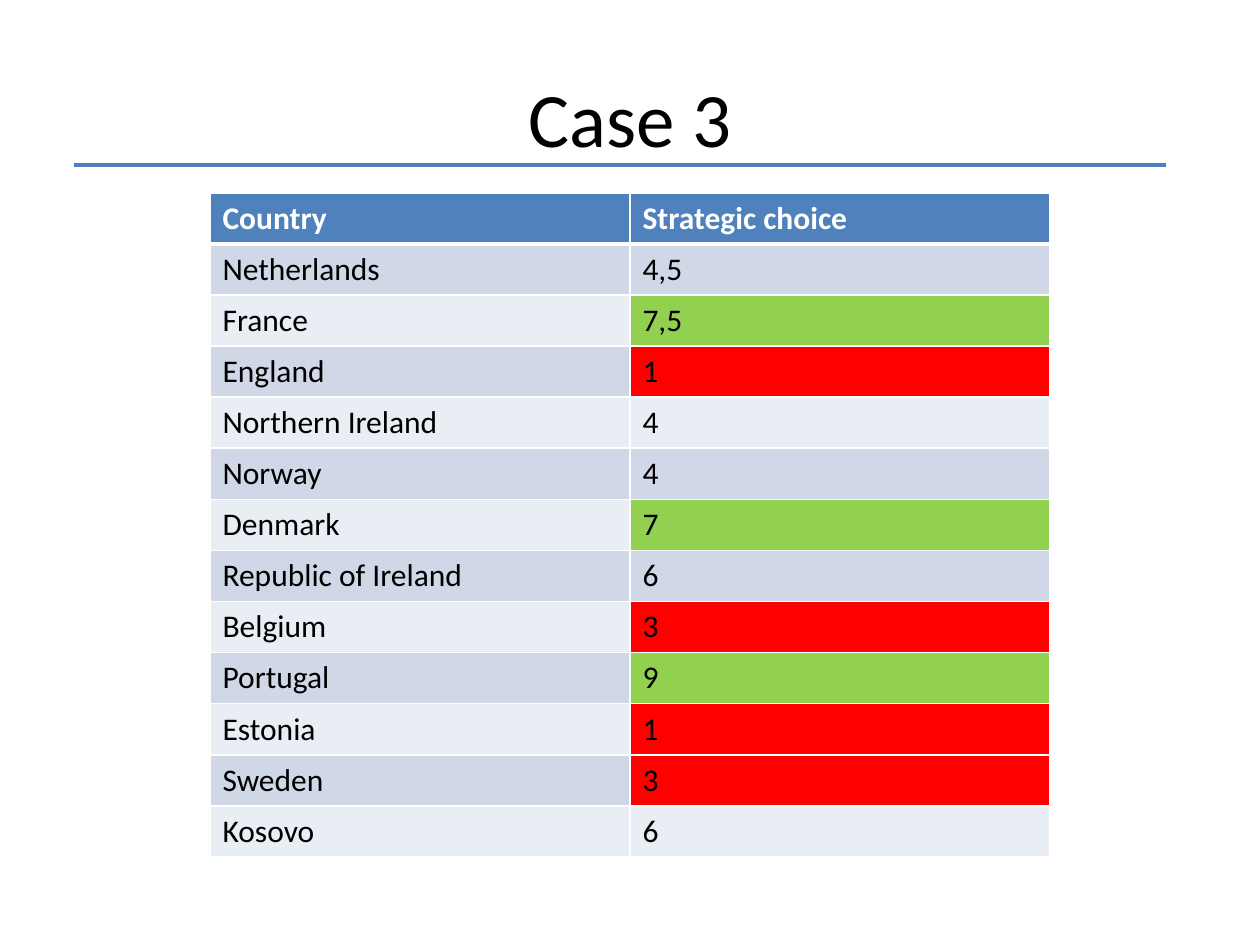
from lxml import etree
from pptx import Presentation
from pptx.dml.color import RGBColor
from pptx.enum.shapes import MSO_CONNECTOR
from pptx.enum.text import MSO_ANCHOR, PP_ALIGN
from pptx.oxml.ns import qn
from pptx.util import Inches, Pt

STRAIGHT = MSO_CONNECTOR.STRAIGHT
MIDDLE = MSO_ANCHOR.MIDDLE
LEFT, CENTER = PP_ALIGN.LEFT, PP_ALIGN.CENTER

# Content
TITLE = "Case 3"
HEADER = ("Country", "Strategic choice")
SCORES = [
    ("Netherlands", "4,5"),
    ("France", "7,5"),
    ("England", "1"),
    ("Northern Ireland", "4"),
    ("Norway", "4"),
    ("Denmark", "7"),
    ("Republic of Ireland", "6"),
    ("Belgium", "3"),
    ("Portugal", "9"),
    ("Estonia", "1"),
    ("Sweden", "3"),
    ("Kosovo", "6"),
]
LOW_SCORE, HIGH_SCORE = 3, 7

# Style
FONT = "Calibri"
COLORS = {
    "text": "000000", "white": "FFFFFF", "rule": "4B7EBC", "header": "4F81BD",
    "odd": "D0D8E8", "even": "E9EDF4", "high": "92D050", "low": "FF0000",
}

# Layout
SLIDE_WIDTH, SLIDE_HEIGHT = Inches(10), Inches(7.5)
TABLE_WIDTH = SLIDE_WIDTH * 2 // 3
TABLE_HEIGHT = Inches(5.27)
TABLE_TOP = Inches(1.53)


def color(name):
    return RGBColor.from_string(COLORS[name])


def write_text(frame, text, size=18, fill="text", bold=False, align=LEFT):
    paragraph = frame.paragraphs[0]
    paragraph.alignment = align
    run = paragraph.add_run()
    run.text = text
    run.font.name = FONT
    run.font.size = Pt(size)
    run.font.bold = bold
    run.font.color.rgb = color(fill)


def set_borders(cell, top=1, bottom=1):
    properties = cell._tc.get_or_add_tcPr()
    widths = {"a:lnL": 1, "a:lnR": 1, "a:lnT": top, "a:lnB": bottom}
    for position, (tag, width) in enumerate(widths.items()):
        line = etree.Element(qn(tag), w=str(Pt(width)))
        fill = etree.SubElement(line, qn("a:solidFill"))
        etree.SubElement(fill, qn("a:srgbClr"), val=COLORS["white"])
        properties.insert(position, line)


def cell_fill(row, column, text):
    if row == 0:
        return "header"
    if column == 1:
        score = float(text.replace(",", "."))
        if score <= LOW_SCORE:
            return "low"
        if score >= HIGH_SCORE:
            return "high"
    return "odd" if row % 2 else "even"


def add_title(slide):
    title = slide.shapes.title
    title.left, title.top = Inches(0.5), Inches(0.3)
    title.width, title.height = Inches(9), Inches(1.25)
    title.text_frame.vertical_anchor = MIDDLE
    write_text(title.text_frame, TITLE, size=44, align=CENTER)


def add_rule(slide):
    height = Inches(1.31)
    rule = slide.shapes.add_connector(
        STRAIGHT, Inches(0.59), height, Inches(9.25), height)
    rule.line.color.rgb = color("rule")
    rule.line.width = Pt(2.5)
    etree.SubElement(rule._element.spPr, qn("a:effectLst"))


def add_score_table(slide):
    rows = [HEADER, *SCORES]
    left = (SLIDE_WIDTH - TABLE_WIDTH) // 2
    table = slide.shapes.add_table(
        len(rows), len(HEADER), left, TABLE_TOP, TABLE_WIDTH, TABLE_HEIGHT).table
    for row, values in enumerate(rows):
        is_header = row == 0
        for column, text in enumerate(values):
            cell = table.cell(row, column)
            write_text(cell.text_frame, text, bold=is_header,
                       fill="white" if is_header else "text")
            cell.fill.solid()
            cell.fill.fore_color.rgb = color(cell_fill(row, column, text))
            set_borders(cell, top=3 if row == 1 else 1,
                        bottom=3 if is_header else 1)


def main():
    presentation = Presentation()
    presentation.slide_width = SLIDE_WIDTH
    presentation.slide_height = SLIDE_HEIGHT
    slide = presentation.slides.add_slide(presentation.slide_layouts[5])
    add_title(slide)
    add_rule(slide)
    add_score_table(slide)
    presentation.save("out.pptx")


if __name__ == "__main__":
    main()
